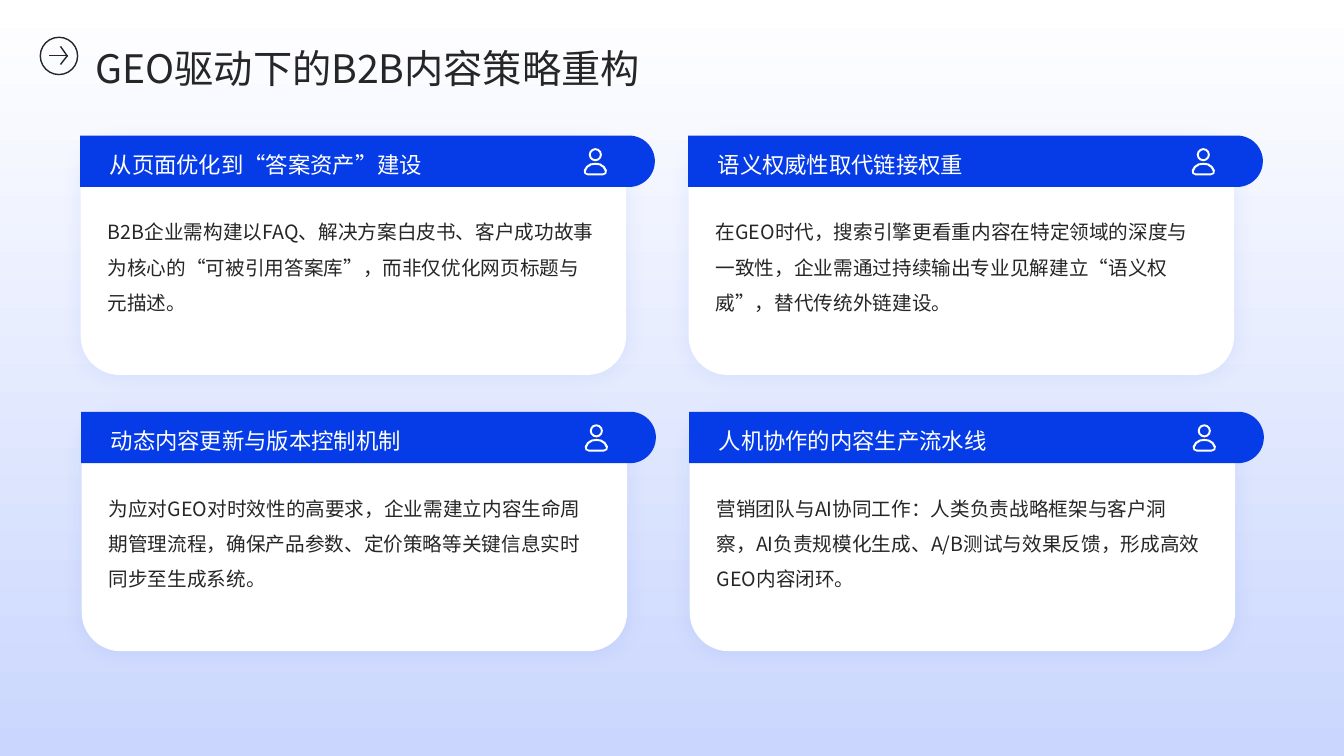
"""Build a slide of four content strategy cards under one title."""
from dataclasses import dataclass
from math import cos, pi, sin

from lxml import etree
from pptx import Presentation
from pptx.dml.color import RGBColor
from pptx.enum.shapes import MSO_CONNECTOR, MSO_SHAPE
from pptx.enum.text import MSO_ANCHOR, MSO_AUTO_SIZE, PP_ALIGN
from pptx.oxml.ns import qn
from pptx.util import Pt

PX = 9144
TENTH = PX / 10
WIDE, HIGH = 1333, 750
FONT = "Noto Sans CJK SC"
WHITE = RGBColor(0xFF, 0xFF, 0xFF)
PALE = RGBColor(0xCA, 0xD6, 0xFE)
BLUE = RGBColor(0x06, 0x3C, 0xE8)
DARK = RGBColor(0x26, 0x26, 0x26)
RECT, ROUND = MSO_SHAPE.RECTANGLE, MSO_SHAPE.ROUNDED_RECTANGLE
TAB, OVAL = MSO_SHAPE.ROUND_2_SAME_RECTANGLE, MSO_SHAPE.OVAL
LINE = MSO_CONNECTOR.STRAIGHT
TOP, MIDDLE = MSO_ANCHOR.TOP, MSO_ANCHOR.MIDDLE
FIXED = MSO_AUTO_SIZE.NONE
LEFT = PP_ALIGN.LEFT

OUTER = [(115, 145), (65, 152), (25, 178), (0, 220), (7, 255), (40, 270)]
INNER = [(115, 165), (75, 170), (40, 193), (20, 230), (24, 245), (40, 250)]
ARROW = [(49, 55, 67, 55), (60, 64, 67, 55), (60, 46, 67, 56)]


@dataclass
class Card:
    """Hold the words of one card."""
    head: str
    body: str


CARDS = [
    Card("从页面优化到“答案资产”建设",
         "B2B企业需构建以FAQ、解决方案白皮书、客户成功故事为核心的“可被引用答案库”，而非仅优化网页标题与元描述。"),
    Card("语义权威性取代链接权重",
         "在GEO时代，搜索引擎更看重内容在特定领域的深度与一致性，企业需通过持续输出专业见解建立“语义权威”，替代传统外链建设。"),
    Card("动态内容更新与版本控制机制",
         "为应对GEO对时效性的高要求，企业需建立内容生命周期管理流程，确保产品参数、定价策略等关键信息实时同步至生成系统。"),
    Card("人机协作的内容生产流水线",
         "营销团队与AI协同工作：人类负责战略框架与客户洞察，AI负责规模化生成、A/B测试与效果反馈，形成高效GEO内容闭环。"),
]


def scale(*sizes: int) -> list[int]:
    """Turn px into EMU."""
    return [size * PX for size in sizes]


def add_form(shapes, kind, box: tuple, fill: RGBColor | None = None):
    """Add a plain preset shape without line or shadow."""
    form = shapes.add_shape(kind, *scale(*box))
    form.shadow.inherit = False
    form.line.fill.background()
    if fill is None:
        form.fill.background()
    else:
        form.fill.solid()
        form.fill.fore_color.rgb = fill
    return form


def write(shape, text: str, *, size: int, color: RGBColor, space: float,
          inset: bool = True, anchor=TOP) -> None:
    """Put formatted text into a shape."""
    frame = shape.text_frame
    frame.auto_size = FIXED
    frame.word_wrap = True
    frame.vertical_anchor = anchor
    if not inset:
        frame.margin_left = frame.margin_right = 0
        frame.margin_top = frame.margin_bottom = 0
    para = frame.paragraphs[0]
    para.alignment = LEFT
    para.line_spacing = space
    para._element.get_or_add_pPr().set("hangingPunct", "0")
    run = para.add_run()
    run.text = text
    run.font.size = Pt(size)
    run.font.color.rgb = color
    run.font.name = FONT
    etree.SubElement(run.font._element, qn("a:ea"), typeface=FONT)


def add_text(shapes, box: tuple, text: str, **style) -> None:
    """Add a text box."""
    write(shapes.add_textbox(*scale(*box)), text, **style)


def add_glow(form) -> None:
    """Give a shape a soft blue shadow."""
    glow = etree.SubElement(form._element.spPr.find(qn("a:effectLst")),
                            qn("a:outerShdw"), blurRad=str(Pt(15)), dist="0",
                            dir="0", algn="ctr", rotWithShape="0")
    tint = etree.SubElement(glow, qn("a:srgbClr"), val=str(BLUE))
    etree.SubElement(tint, qn("a:alpha"), val="8000")


def ring(radius: int) -> list[tuple]:
    """Trace the head of the person icon."""
    turns = [2 * pi * step / 12 for step in range(12)]
    return [(115 + radius * cos(turn), 65 + radius * sin(turn)) for turn in turns]


def torso(half: list) -> list[tuple]:
    """Mirror the left half of the body."""
    return half + [(230 - x, y) for x, y in half[:0:-1]]


def add_person(shapes, left: int, top: int) -> None:
    """Draw the person icon as one white outline."""
    first, *rest = [ring(65), ring(45), torso(OUTER), torso(INNER)]
    pen = shapes.build_freeform(*first[0], scale=TENTH)
    pen.add_line_segments(first[1:])
    for loop in rest:
        pen.move_to(*loop[0])
        pen.add_line_segments(loop[1:])
    icon = pen.convert_to_shape(*scale(left, top))
    icon.shadow.inherit = False
    icon.fill.solid()
    icon.fill.fore_color.rgb = WHITE
    icon.line.fill.background()


def add_card(shapes, card: Card, left: int, top: int) -> None:
    """Draw one card with its bar, icon and words."""
    add_glow(add_form(shapes, ROUND, (left, top, 541, 232), WHITE))
    bar = add_form(shapes, TAB, (left + 259, top - 265, 51, 570), BLUE)
    bar.rotation = 90
    bar.adjustments[0] = 0.5
    bar.adjustments[1] = 0
    add_text(shapes, (left + 19, top + 2, 466, 44), card.head,
             size=16, color=WHITE, space=1.1)
    add_person(shapes, left + 499, top + 7)
    add_text(shapes, (left + 17, top + 62, 505, 149), card.body,
             size=14, color=DARK, space=1.5)


def add_arrow(shapes) -> None:
    """Draw the arrow in a circle beside the title."""
    group = shapes.add_group_shape().shapes
    disc = add_form(group, OVAL, (40, 37, 37, 37))
    strokes = [group.add_connector(LINE, *scale(*ends)) for ends in ARROW]
    for part in [disc, *strokes]:
        part.line.color.rgb = DARK
        part.line.width = Pt(1)
    for stroke in strokes:
        etree.SubElement(stroke._element.spPr, qn("a:effectLst"))


def main() -> None:
    """Build and save the slide."""
    deck = Presentation()
    deck.slide_width, deck.slide_height = scale(WIDE, HIGH)
    slide = deck.slides.add_slide(deck.slide_layouts[5])
    shapes = slide.shapes
    title = shapes.title
    back = add_form(shapes, RECT, (0, 0, WIDE, HIGH), WHITE)
    back.fill.gradient()
    back.fill.gradient_angle = 270
    for stop, color in zip(back.fill.gradient_stops, (WHITE, PALE)):
        stop.color.rgb = color
    for index, card in enumerate(CARDS):
        row, col = divmod(index, 2)
        add_card(shapes, card, 80 + 603 * col + row, 140 + 274 * row)
    shapes._spTree.append(title._element)
    title.left, title.top, title.width, title.height = scale(95, 31, 1135, 59)
    write(title, "GEO驱动下的B2B内容策略重构", size=28, color=DARK, space=1.3,
          inset=False, anchor=MIDDLE)
    add_arrow(shapes)
    deck.save("out.pptx")


if __name__ == "__main__":
    main()
